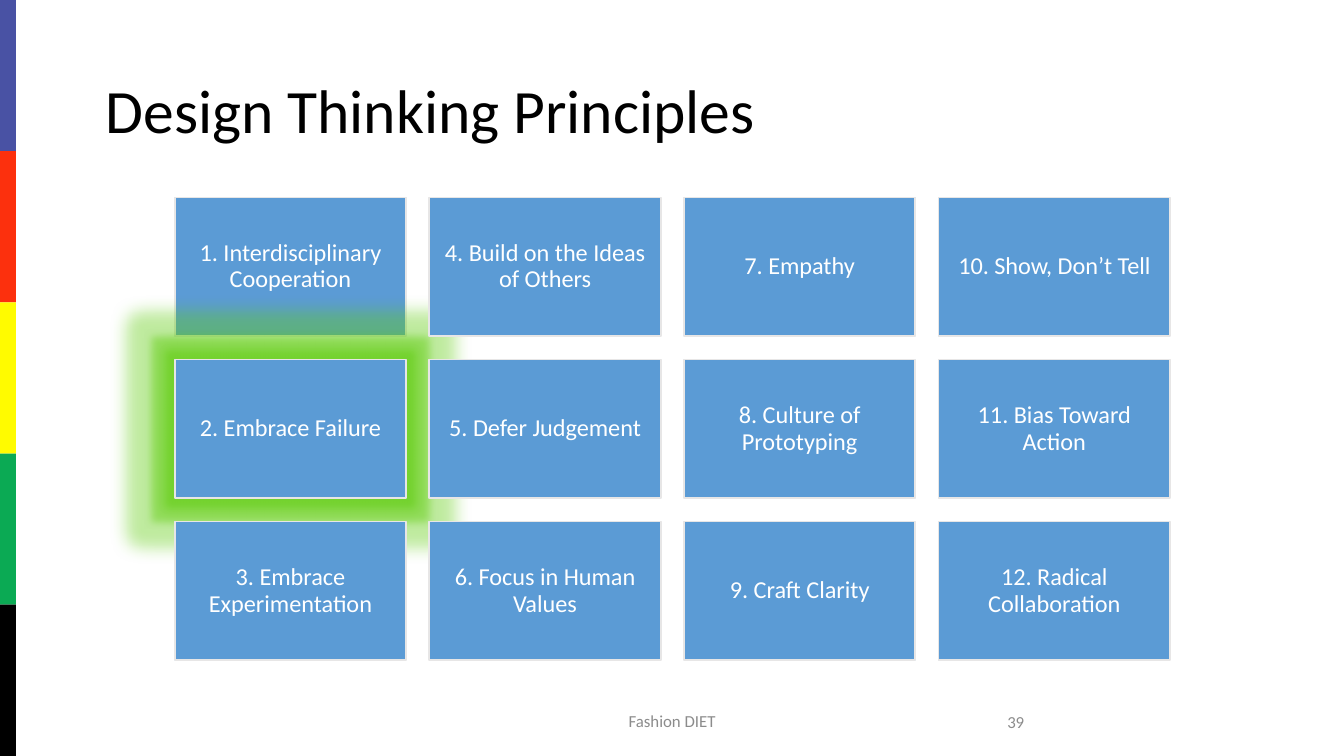
from lxml import etree
from pptx import Presentation
from pptx.dml.color import RGBColor
from pptx.enum.shapes import MSO_SHAPE
from pptx.enum.text import MSO_ANCHOR, PP_ALIGN
from pptx.oxml.ns import qn
from pptx.util import Pt

RECT = MSO_SHAPE.RECTANGLE
MIDDLE = MSO_ANCHOR.MIDDLE
LEFT, CENTER, RIGHT = PP_ALIGN.LEFT, PP_ALIGN.CENTER, PP_ALIGN.RIGHT

WIDTH, HEIGHT = 720, 405
STRIPES = ["4952A4", "FC300D", "FFFB00", "0BAA54", "000000"]
# text, box, size, colour, alignment, line spacing
TEXTS = [
    ("Design Thinking Principles", (49.5, 21.6, 621, 78.3), 33, "000000", LEFT, 0.9),
    ("Fashion DIET", (238.5, 375.3, 243, 21.6), 9, "8C8C8C", CENTER, 1.0),
    ("39", (393.8, 375.8, 162, 21.6), 9, "8C8C8C", RIGHT, 1.0),
]
PRINCIPLES = [  # filled column by column
    "1. Interdisciplinary Cooperation", "2. Embrace Failure",
    "3. Embrace Experimentation", "4. Build on the Ideas of Others",
    "5. Defer Judgement", "6. Focus in Human Values",
    "7. Empathy", "8. Culture of Prototyping", "9. Craft Clarity",
    "10. Show, Don’t Tell", "11. Bias Toward Action", "12. Radical Collaboration",
]
HIGHLIGHTED = "2. Embrace Failure"
ROWS = 3
GRID_LEFT, GRID_TOP = 93.6, 105.8
TILE_W, TILE_H, GAP = 124, 74.4, 12.4
TILE_BLUE, TILE_LINE, GLOW_GREEN = "5B9BD5", "E7E6E6", "61CD11"


def rgb(color):
    return RGBColor.from_string(color)


def add_rect(s, box, fill, line=None):
    sp = s.shapes.add_shape(RECT, *map(Pt, box))
    sp.shadow.inherit = False
    sp.fill.solid()
    sp.fill.fore_color.rgb = rgb(fill)
    if line:
        sp.line.color.rgb = rgb(line)
        sp.line.width = Pt(1)
    else:
        sp.line.fill.background()
    return sp


def add_glow(sp, radius):
    effects = sp._element.spPr.find(qn("a:effectLst"))
    glow = etree.SubElement(effects, qn("a:glow"), rad=str(Pt(radius)))
    color = etree.SubElement(glow, qn("a:srgbClr"), val=GLOW_GREEN)
    etree.SubElement(color, qn("a:alpha"), val="40000")


def set_text(sp, text, size, color, align, spacing):
    tf = sp.text_frame
    tf.word_wrap = True
    tf.vertical_anchor = MIDDLE
    tf.text = text
    p = tf.paragraphs[0]
    p.alignment = align
    p.line_spacing = spacing
    font = p.runs[0].font
    font.name = "Calibri"
    font.size = Pt(size)
    font.color.rgb = rgb(color)
    return tf


prs = Presentation()
prs.slide_width, prs.slide_height = Pt(WIDTH), Pt(HEIGHT)
s = prs.slides.add_slide(prs.slide_layouts[6])

stripe_h = HEIGHT / len(STRIPES)
for i, color in enumerate(STRIPES):
    add_rect(s, (0, i * stripe_h, 8.6, stripe_h), color)

for text, box, *style in TEXTS:
    set_text(s.shapes.add_textbox(*map(Pt, box)), text, *style)

for i, text in enumerate(PRINCIPLES):
    col, row = divmod(i, ROWS)
    box = (GRID_LEFT + col * (TILE_W + GAP), GRID_TOP + row * (TILE_H + GAP),
           TILE_W, TILE_H)
    if text == HIGHLIGHTED:
        add_glow(add_rect(s, box, TILE_BLUE), 18)
    tile = add_rect(s, box, TILE_BLUE, TILE_LINE)
    if text == HIGHLIGHTED:
        add_glow(tile, 8)
    tf = set_text(tile, text, 13, "FFFFFF", CENTER, 0.9)
    tf.margin_left = tf.margin_right = tf.margin_top = tf.margin_bottom = Pt(3.6)

prs.save("out.pptx")
